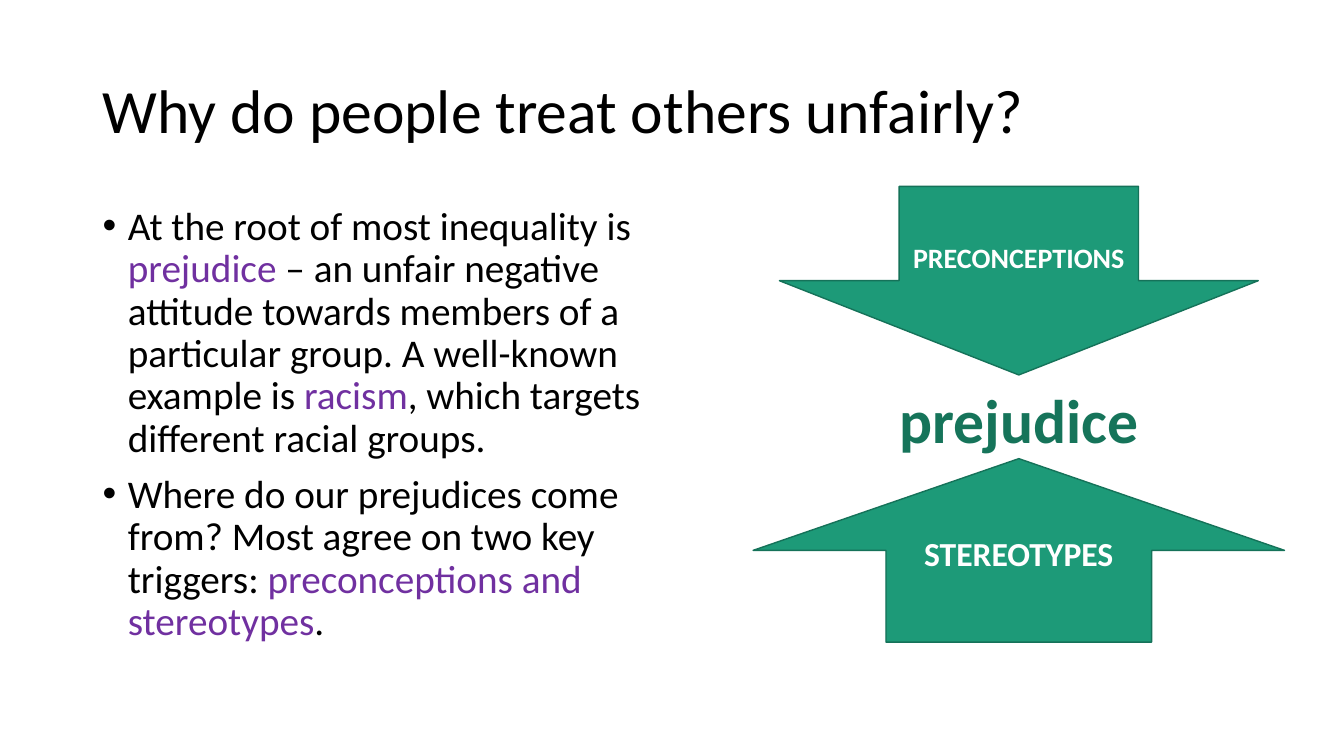
import pptx
import pptx.dml.color
import pptx.enum.shapes
import pptx.enum.text
import pptx.oxml
import pptx.oxml.ns
import pptx.util
from pptx.util import Inches

COLOURS = {
    "text": "000000",
    "key term": "7030A0",
    "arrow": "1D9A78",
    "arrow edge": "157259",
    "arrow text": "FFFFFF",
    "result": "16745A",
    "result edge": "169874",
}
FONT = "Calibri"

TITLE = "Why do people treat others unfairly?"
BULLETS = [
    [
        ("At the root of most inequality is ", "text"),
        ("prejudice", "key term"),
        (" – an unfair negative attitude towards members of a particular group. "
         "A well-known example is ", "text"),
        ("racism", "key term"),
        (", which targets different racial groups.", "text"),
    ],
    [
        ("Where do our prejudices come from? Most agree on two key triggers: ", "text"),
        ("preconceptions and stereotypes", "key term"),
        (".", "text"),
    ],
]
RESULT = "prejudice"
ARROW_CENTRE = 10.105
# label, preset, top, width, height, text size, bottom inset
ARROWS = [
    ("PRECONCEPTIONS", "DOWN_ARROW", 1.85, 4.75, 1.87, 20, 0.05),
    ("STEREOTYPES", "UP_ARROW", 4.55, 5.27, 1.82, 24, 0.45),
]


def rgb(name):
    return pptx.dml.color.RGBColor.from_string(COLOURS[name])


def add_run(paragraph, text, size, colour, bold=False):
    run = paragraph.add_run()
    run.text = text
    run.font.name = FONT
    run.font.size = pptx.util.Pt(size)
    run.font.bold = bold
    run.font.color.rgb = rgb(colour)
    return run


def add_text_frame(slide, left, top, width, height, wrap=True):
    box = slide.shapes.add_textbox(Inches(left), Inches(top), Inches(width), Inches(height))
    box.text_frame.word_wrap = wrap
    return box.text_frame


def add_bullet(paragraph):
    properties = paragraph._p.get_or_add_pPr()
    properties.set("marL", str(Inches(0.25)))
    properties.set("indent", str(Inches(-0.25)))
    for tag, name, value in [("buFont", "typeface", "Arial"), ("buChar", "char", "•")]:
        element = pptx.oxml.parse_xml(f'<a:{tag} {pptx.oxml.ns.nsdecls("a")} {name}="{value}"/>')
        properties.append(element)


def add_outline(run, colour, width):
    """Draw a thin line round the letters of a run."""
    outline = pptx.oxml.parse_xml(
        f'<a:ln {pptx.oxml.ns.nsdecls("a")} w="{pptx.util.Pt(width)}">'
        f'<a:solidFill><a:srgbClr val="{COLOURS[colour]}"/></a:solidFill></a:ln>')
    run._r.get_or_add_rPr().insert(0, outline)


def add_title(slide):
    frame = add_text_frame(slide, 0.92, 0.4, 11.5, 1.45)
    frame.vertical_anchor = pptx.enum.text.MSO_ANCHOR.MIDDLE
    frame.paragraphs[0].line_spacing = 0.9
    add_run(frame.paragraphs[0], TITLE, 44, "text")


def add_body(slide):
    frame = add_text_frame(slide, 0.92, 2, 6.07, 4.76)
    for index, runs in enumerate(BULLETS):
        paragraph = frame.add_paragraph() if index else frame.paragraphs[0]
        paragraph.line_spacing = 0.9
        paragraph.space_before = pptx.util.Pt(10)
        add_bullet(paragraph)
        for text, colour in runs:
            add_run(paragraph, text, 28, colour)


def add_arrow(slide, label, preset, top, width, height, size, bottom_inset):
    arrow = slide.shapes.add_shape(
        pptx.enum.shapes.MSO_SHAPE[preset], Inches(ARROW_CENTRE - width / 2),
        Inches(top), Inches(width), Inches(height))
    arrow.shadow.inherit = False
    arrow.fill.solid()
    arrow.fill.fore_color.rgb = rgb("arrow")
    arrow.line.color.rgb = rgb("arrow edge")
    arrow.line.width = pptx.util.Pt(1)
    frame = arrow.text_frame
    frame.word_wrap = True
    frame.vertical_anchor = pptx.enum.text.MSO_ANCHOR.MIDDLE
    frame.margin_bottom = Inches(bottom_inset)
    frame.paragraphs[0].alignment = pptx.enum.text.PP_ALIGN.CENTER
    add_run(frame.paragraphs[0], label, size, "arrow text", bold=True)


def add_result(slide):
    width = 2.59
    frame = add_text_frame(slide, ARROW_CENTRE - width / 2, 3.74, width, 0.84, wrap=False)
    frame.auto_size = pptx.enum.text.MSO_AUTO_SIZE.SHAPE_TO_FIT_TEXT
    frame.paragraphs[0].alignment = pptx.enum.text.PP_ALIGN.CENTER
    run = add_run(frame.paragraphs[0], RESULT, 44, "result", bold=True)
    add_outline(run, "result edge", 0.83)


def main():
    presentation = pptx.Presentation()
    presentation.slide_width = Inches(13.33)
    presentation.slide_height = Inches(7.5)
    slide = presentation.slides.add_slide(presentation.slide_layouts[6])
    add_title(slide)
    add_body(slide)
    for arrow in ARROWS:
        add_arrow(slide, *arrow)
    add_result(slide)
    presentation.save("out.pptx")


if __name__ == "__main__":
    main()
